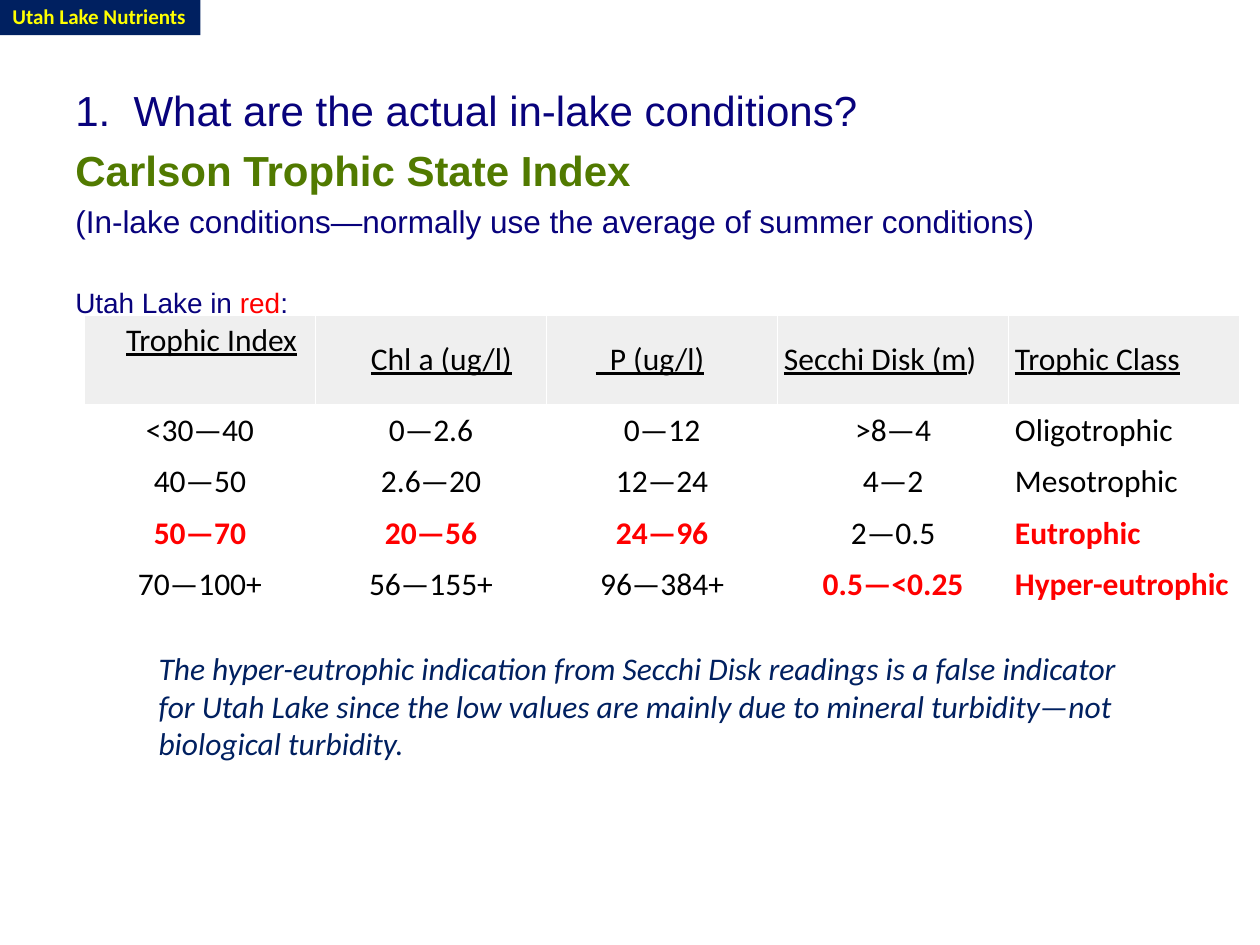
import pptx
import pptx.util
import pptx.dml.color
import pptx.enum.shapes
import pptx.enum.text
from dataclasses import dataclass

Inches, Pt = pptx.util.Inches, pptx.util.Pt
Align = pptx.enum.text.PP_ALIGN
Anchor = pptx.enum.text.MSO_ANCHOR


@dataclass(frozen=True)
class Theme:
    head: str = "Arial"
    body: str = "Calibri"
    navy: str = "002060"
    blue: str = "08027C"
    green: str = "517A00"
    red: str = "FF0000"
    yellow: str = "FFFF00"
    black: str = "000000"
    gray: str = "EFEFEF"
    title: int = 24
    text: int = 18
    small: int = 16
    tag: int = 12


T = Theme()
HEADS = [  # indent, underlined text, plain tail
    (0.28, "Trophic Index", ""),
    (0.39, "Chl a (ug/l)", ""),
    (0.34, "  P (ug/l)", ""),
    (0, "Secchi Disk (m", ")"),
    (0, "Trophic Class", ""),
]
ROWS = [
    ["<30—40", "0—2.6", "0—12", ">8—4", "Oligotrophic"],
    ["40—50", "2.6—20", "12—24", "4—2", "Mesotrophic"],
    ["50—70", "20—56", "24—96", "2—0.5", "Eutrophic"],
    ["70—100+", "56—155+", "96—384+", "0.5—<0.25", "Hyper-eutrophic"],
]
LAKE = {"50—70", "20—56", "24—96", "Eutrophic", "0.5—<0.25", "Hyper-eutrophic"}


def rgb(code):
    return pptx.dml.color.RGBColor.from_string(code)


def add_run(para, text, size, color, name=T.body, **form):
    run = para.add_run()
    run.text = text
    run.font.color.rgb = rgb(color)
    for key, val in {"size": Pt(size), "name": name, **form}.items():
        setattr(run.font, key, val)


def add_tag(slide, box):
    rect = pptx.enum.shapes.MSO_SHAPE.RECTANGLE
    shape = slide.shapes.add_shape(rect, *map(Inches, box))
    shape.shadow.inherit = False
    shape.fill.solid()
    shape.fill.fore_color.rgb = rgb(T.navy)
    shape.line.fill.background()
    frame = shape.text_frame
    frame.word_wrap = False
    frame.vertical_anchor = Anchor.MIDDLE
    para = frame.paragraphs[0]
    para.alignment = Align.LEFT
    add_run(para, "Utah Lake Nutrients", T.tag, T.yellow, bold=True)


def add_frame(slide, box):
    frame = slide.shapes.add_textbox(*map(Inches, box)).text_frame
    frame.word_wrap = True
    return frame


def add_intro(slide, box):
    frame = add_frame(slide, box)
    frame.margin_top = Inches(0.09)
    lines = [  # space before, size, bold, runs
        (0, T.title, False,
         [("1.  What are the actual in-lake conditions?", T.blue)]),
        (5.5, T.title, True, [("Carlson Trophic State Index", T.green)]),
        (4, T.text, False,
         [("(In-lake conditions—normally use the average of summer conditions)",
           T.blue)]),
        (26, T.small, False,
         [("Utah Lake in ", T.blue), ("red", T.red), (":", T.blue)]),
    ]
    for num, (gap, size, bold, runs) in enumerate(lines):
        para = frame.add_paragraph() if num else frame.paragraphs[0]
        para.space_before = Pt(gap)
        for text, color in runs:
            add_run(para, text, size, color, T.head, bold=bold)


def set_cell(cell, fill=None, indent=0.0, anchor=Anchor.MIDDLE):
    """Format a cell and return its paragraph."""
    if fill:
        cell.fill.solid()
        cell.fill.fore_color.rgb = rgb(fill)
    else:
        cell.fill.background()
    edge = Inches(0.05)
    form = {"margin_left": edge + Inches(indent), "margin_right": edge,
            "margin_top": edge, "margin_bottom": edge,
            "vertical_anchor": anchor}
    for key, val in form.items():
        setattr(cell, key, val)
    return cell.text_frame.paragraphs[0]


def add_grid(slide, box):
    count = len(HEADS)
    grid = slide.shapes.add_table(len(ROWS) + 1, count, *map(Inches, box)).table
    grid.first_row = grid.horz_banding = False
    for col in grid.columns:
        col.width = Inches(box[2] / count)
    for num, row in enumerate(grid.rows):
        row.height = Inches(0.41 if num else 0.71)
    for col, (indent, text, tail) in enumerate(HEADS):
        anchor = Anchor.MIDDLE if col else Anchor.TOP
        para = set_cell(grid.cell(0, col), T.gray, indent, anchor)
        add_run(para, text, T.text, T.black, underline=True)
        if tail:
            add_run(para, tail, T.text, T.black)
    for num, row in enumerate(ROWS, 1):
        for col, text in enumerate(row):
            para = set_cell(grid.cell(num, col))
            para.alignment = Align.CENTER if col < count - 1 else Align.LEFT
            mark = text in LAKE
            add_run(para, text, T.text, T.red if mark else T.black, bold=mark)


def add_note(slide, box):
    text = ("The hyper-eutrophic indication from Secchi Disk readings is a "
            "false indicator for Utah Lake since the low values are mainly due "
            "to mineral turbidity—not biological turbidity.")
    para = add_frame(slide, box).paragraphs[0]
    add_run(para, text, T.text, T.navy, italic=True)


def main():
    deck = pptx.Presentation()
    deck.slide_width, deck.slide_height = Inches(10), Inches(7.5)
    slide = deck.slides.add_slide(deck.slide_layouts[6])
    add_tag(slide, (0, -0.02, 1.59, 0.3))
    add_intro(slide, (0.5, 0.58, 9, 3.92))
    add_grid(slide, (0.67, 2.5, 9.17, 2.35))
    add_note(slide, (1.16, 5.1, 7.92, 1.31))
    deck.save("out.pptx")


if __name__ == "__main__":
    main()
